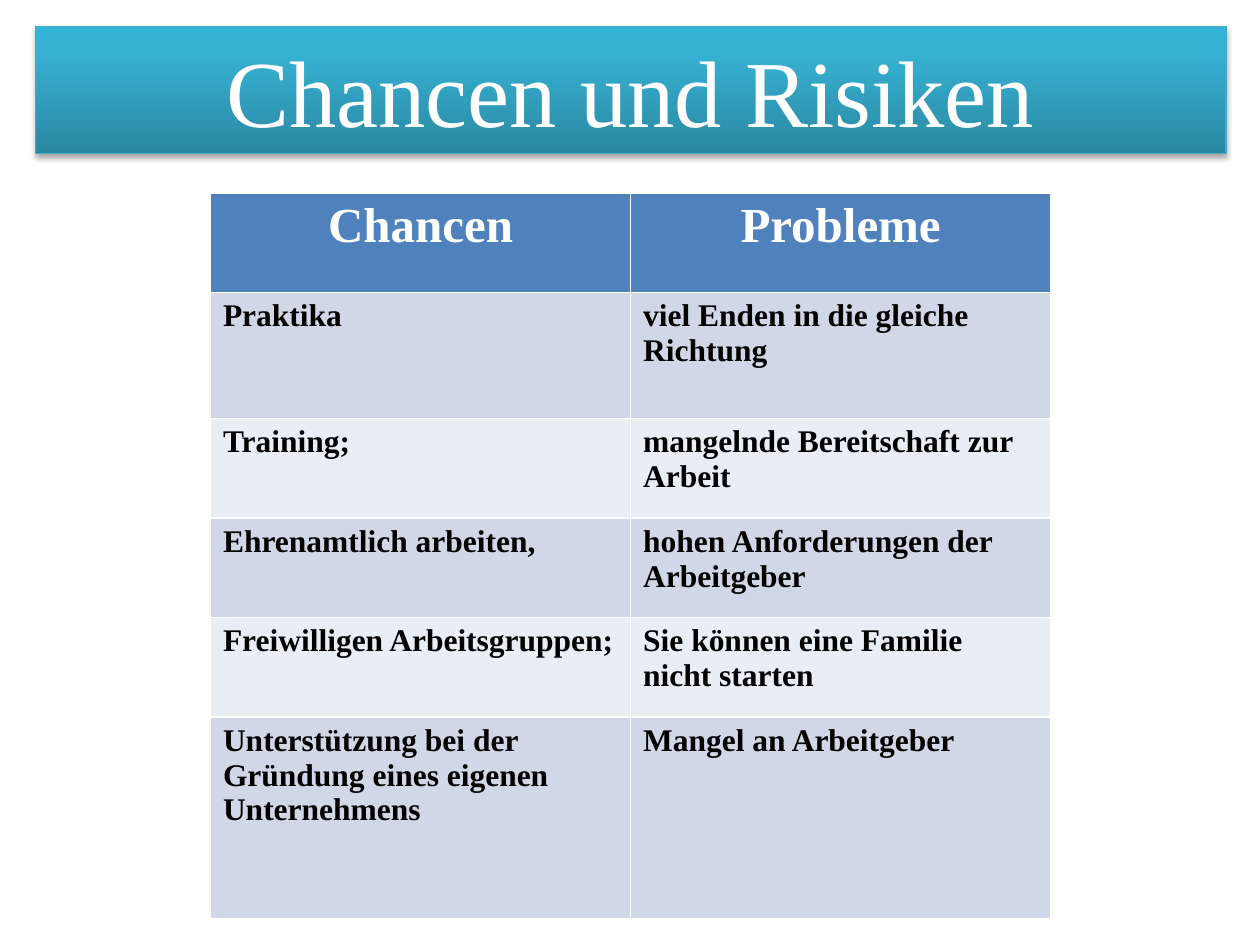
from pptx import Presentation
from pptx import util as u
from pptx.dml.color import RGBColor
from pptx.enum import text
from pptx.oxml import parse_xml
from pptx.oxml.ns import nsdecls

HUES = {
    "white": "FFFFFF", "black": "000000", "edge": "46AAC5",
    "deep": "2A88A2", "mid": "37B1D2", "top": "34B4D6",
    "head": "4F81BD", "dark": "D0D8E8", "light": "E9EDF4",
}
FONT = "Times New Roman"
ROWS = [
    ("Chancen", "Probleme"),
    ("Praktika", "viel Enden in die gleiche Richtung"),
    ("Training;", "mangelnde Bereitschaft zur Arbeit"),
    ("Ehrenamtlich arbeiten,", "hohen Anforderungen der Arbeitgeber"),
    ("Freiwilligen Arbeitsgruppen;", "Sie können eine Familie nicht starten"),
    ("Unterstützung bei der Gründung eines eigenen Unternehmens",
     "Mangel an Arbeitgeber"),
]
HIGHS = [0.79, 1, 0.79, 0.79, 0.79, 1.6]


def hue(name):
    return RGBColor.from_string(HUES[name])


def write(frame, words, size, tint, bold=False, align=None):
    par = frame.paragraphs[0]
    par.alignment = align
    run = par.add_run()
    run.text = words
    font = run.font
    font.name, font.size, font.bold = FONT, u.Pt(size), bold
    font.color.rgb = hue(tint)


def shade(shape):
    """Give the shape a three-stop vertical gradient and a soft shadow."""
    stops = "".join(
        f'<a:gs pos="{pos * 1000}"><a:srgbClr val="{HUES[name]}"/></a:gs>'
        for pos, name in [(0, "deep"), (80, "mid"), (100, "top")])
    props = shape.element.spPr
    props.append(parse_xml(
        f'<a:gradFill {nsdecls("a")} rotWithShape="1"><a:gsLst>{stops}</a:gsLst>'
        '<a:lin ang="16200000" scaled="0"/></a:gradFill>'))
    shape.line.color.rgb = hue("edge")
    shape.line.width = u.Pt(0.75)
    props.append(parse_xml(
        f'<a:effectLst {nsdecls("a")}><a:outerShdw blurRad="{u.Pt(3.1)}" '
        f'dist="{u.Pt(1.8)}" dir="5400000" rotWithShape="0">'
        f'<a:srgbClr val="{HUES["black"]}"><a:alpha val="35000"/></a:srgbClr>'
        '</a:outerShdw></a:effectLst>'))


def add_title(slide, left, top, width, height):
    title = slide.shapes.title
    title.left, title.top = left, top
    title.width, title.height = width, height
    shade(title)
    frame = title.text_frame
    frame.auto_size = text.MSO_AUTO_SIZE.NONE
    frame.vertical_anchor = text.MSO_ANCHOR.MIDDLE
    write(frame, "Chancen und Risiken", 54, "white", align=text.PP_ALIGN.CENTER)


def add_grid(slide, left, top, width, height):
    grid = slide.shapes.add_table(
        len(ROWS), len(ROWS[0]), left, top, width, height).table
    for r, (high, row) in enumerate(zip(HIGHS, ROWS)):
        grid.rows[r].height = int(height * high / sum(HIGHS))
        for c, words in enumerate(row):
            cell = grid.cell(r, c)
            cell.fill.solid()
            if r == 0:
                cell.fill.fore_color.rgb = hue("head")
                write(cell.text_frame, words, 28, "white", True,
                      text.PP_ALIGN.CENTER)
            else:
                cell.fill.fore_color.rgb = hue("dark" if r % 2 else "light")
                write(cell.text_frame, words, 18, "black", True)


def main():
    deck = Presentation()
    deck.slide_width, deck.slide_height = u.Inches(10), u.Inches(7.5)
    slide = deck.slides.add_slide(deck.slide_layouts.get_by_name("Title Only"))
    add_title(slide, *map(u.Inches, (0.28, 0.21, 9.45, 1.01)))
    add_grid(slide, *map(u.Inches, (1.67, 1.53, 6.67, 5.76)))
    deck.save("out.pptx")


if __name__ == "__main__":
    main()
